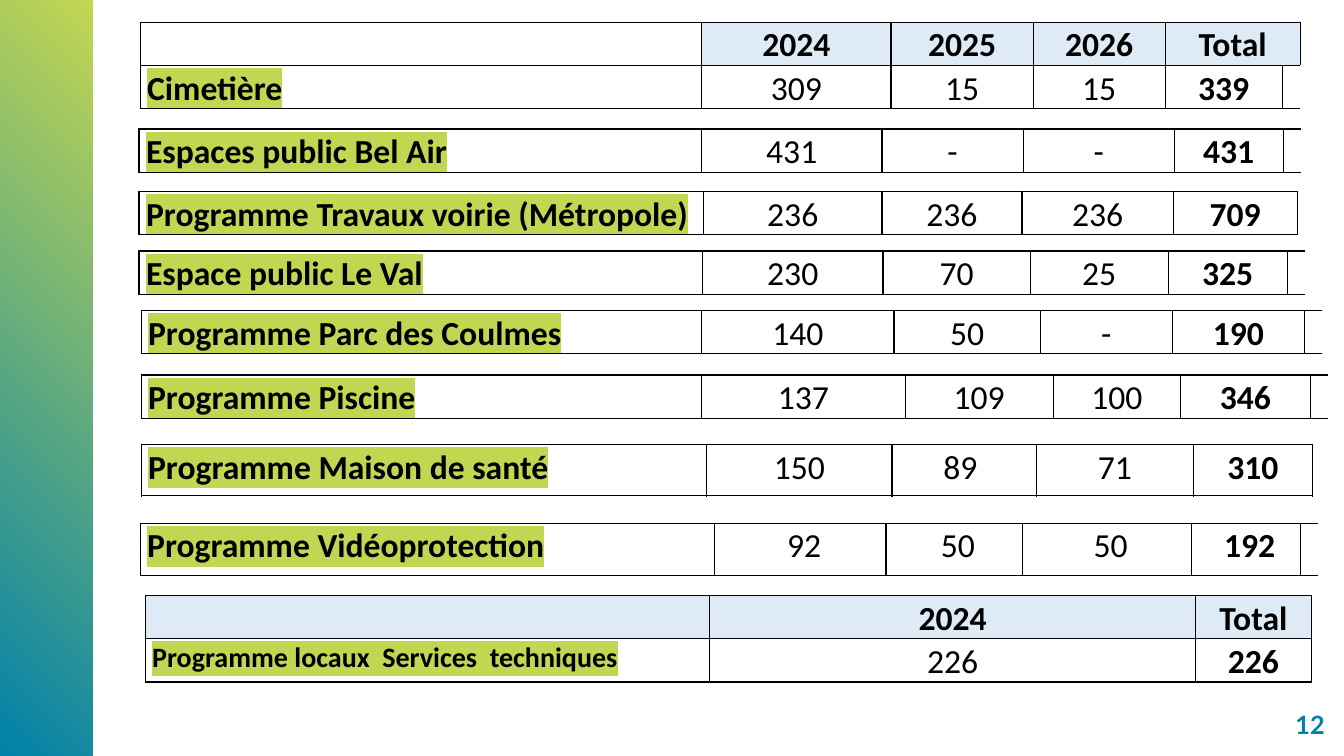
from lxml.etree import SubElement
from pptx import Presentation
from pptx.dml.color import RGBColor
from pptx.enum.shapes import MSO_SHAPE as SHAPE
from pptx.enum.text import MSO_ANCHOR as ANCHOR, PP_ALIGN as ALIGN
from pptx.oxml.ns import qn
from pptx.util import Inches, Pt

BLUE, LIME, PALE, BLACK = "0080AA", "C3D652", "DEEAF6", "000000"
COLS, ROWS = 133.33, 75  # fine layout grid over the slide


def rgb(value):
    return RGBColor.from_string(value)


class Board:
    """Holds the style and the current slide; lengths are grid columns and rows."""

    text = {"size": Pt(24), "name": "Calibri", "bold": True}
    para = {"line_spacing": 1.07, "space_after": Pt(8)}
    inset = {"margin_left": Inches(0.07), "margin_right": Inches(0.07),
             "margin_top": 0, "margin_bottom": 0}

    def __init__(self, prs):
        self.w, self.h = prs.slide_width, prs.slide_height
        self.s = prs.slides.add_slide(prs.slide_layouts[6])

    def x(self, cols):
        return round(self.w * cols / COLS)

    def y(self, rows):
        return round(self.h * rows / ROWS)

    def box(self, x, y, w, h):
        return self.x(x), self.y(y), self.x(w), self.y(h)

    def apply(self, target, values):
        for key, value in values.items():
            setattr(target, key, value)

    def add_text(self, p, text, color=BLACK, mark=None, **font):
        r = p.add_run()
        r.text = text
        self.apply(r.font, {**self.text, **font})
        r.font.color.rgb = rgb(color)
        if mark:
            fill = r.font._element.find(qn("a:solidFill"))
            hl = SubElement(r.font._element, qn("a:highlight"))
            SubElement(hl, qn("a:srgbClr"), val=mark)
            fill.addnext(hl)

    def band(self, *place):
        sp = self.s.shapes.add_shape(SHAPE.RECTANGLE, *self.box(*place))
        sp.shadow.inherit = False
        sp.line.fill.background()
        sp.fill.gradient()
        sp.fill.gradient_angle = 45
        for stop, color, pos in zip(sp.fill.gradient_stops, (BLUE, LIME), (0, 1)):
            stop.color.rgb, stop.position = rgb(color), pos

    def page_number(self, text, *place):
        tf = self.s.shapes.add_textbox(*self.box(*place)).text_frame
        self.apply(tf, {"word_wrap": True, "vertical_anchor": ANCHOR.MIDDLE})
        tf.paragraphs[0].alignment = ALIGN.RIGHT
        self.add_text(tf.paragraphs[0], text, BLUE, size=Pt(18), name="Lato")

    def borders(self, cell, sides):
        tc_pr = cell._tc.get_or_add_tcPr()
        for i, side in enumerate(sides):
            ln = SubElement(tc_pr, qn("a:ln" + side), w=str(Pt(1)))
            SubElement(SubElement(ln, qn("a:solidFill")), qn("a:srgbClr"), val=BLACK)
            tc_pr.insert(i, ln)

    def cell(self, cell, text, fill, **font):
        """A text of None makes a narrow end cell that is open on the right."""
        self.apply(cell, self.inset)
        self.borders(cell, "LTB" if text is None else "LRTB")
        if fill:
            cell.fill.solid()
            cell.fill.fore_color.rgb = rgb(fill)
        else:
            cell.fill.background()
        p = cell.text_frame.paragraphs[0]
        if text:
            self.apply(p, self.para)
            p.alignment = ALIGN.LEFT if font.get("mark") else ALIGN.CENTER
            self.add_text(p, text, **font)

    def table(self, x, y, widths, height, rows, header=(), label_size=24):
        """Label column, yearly amounts and a bold total, under an optional header."""
        grid = ([header] if header else []) + rows
        t = self.s.shapes.add_table(len(grid), len(widths), *self.box(
            x, y, sum(widths), height * len(grid))).table
        self.apply(t, {"first_row": False, "horz_banding": False})
        for col, width in zip(t.columns, widths):
            col.width = self.x(width)
        for i, texts in enumerate(grid):
            t.rows[i].height = self.y(height)
            is_head = bool(header) and i == 0
            last = max(j for j, text in enumerate(texts) if text)
            for j, text in enumerate(texts):
                font = {"bold": is_head or j in (0, last)}
                if j == 0 and not is_head:
                    font.update(mark=LIME, size=Pt(label_size))
                # The corner is plain where yearly columns follow
                fill = PALE if is_head and (j or len(widths) == 3) else None
                self.cell(t.cell(i, j), text, fill, **font)
        if header and len(widths) == 6:
            t.cell(0, 4).merge(t.cell(0, 5))


# Budget lines: left, top, column widths, row height, texts
YEARS = ("", "2024", "2025", "2026", "Total", "")
PROGRAMMES = [
    (13.8, 12.8, (55.8, 17.9, 14, 15, 10.8, 1.2), 4.1,
     ("Espaces public Bel Air", "431", "-", "-", "431", None)),
    (13.8, 19, (56, 17.7, 13.9, 15, 12.3), 4.1,
     ("Programme Travaux voirie (Métropole)", "236", "236", "236", "709")),
    (13.8, 24.9, (55.9, 17.9, 14.6, 13.7, 11.8, 1), 4.1,
     ("Espace public Le Val", "230", "70", "25", "325", None)),
    (14, 30.8, (55.6, 19.1, 14.5, 13.1, 13.1, 0.3), 4.1,
     ("Programme Parc des Coulmes", "140", "50", "-", "190", None)),
    (14, 37.2, (55.6, 20.2, 14.7, 12.6, 12.9, 0.3), 4.1,
     ("Programme Piscine", "137", "109", "100", "346", None)),
    (14, 44.1, (56.1, 18.4, 14.3, 15.6, 11.8), 5.1,
     ("Programme Maison de santé", "150", "89 ", "71", "310")),
    (13.9, 51.9, (57, 17, 13.5, 16.8, 10.8, 1.1), 5.2,
     ("Programme Vidéoprotection", " 92", " 50", " 50", " 192", None)),
]


def main():
    prs = Presentation()
    prs.slide_width, prs.slide_height = Inches(13.33), Inches(7.5)
    board = Board(prs)

    # Side band and page number
    board.band(0, 0, 9.2, ROWS)
    board.page_number("12", 95.2, 69.8, 37.2, 4.1)

    # Table with the year headings
    board.table(13.9, 2.2, (55.7, 18.8, 14.1, 13.1, 11.6, 1), 4.3,
                [("Cimetière", "309", "15", "15", "339", None)], YEARS)

    # One table for each programme
    for x, y, widths, height, texts in PROGRAMMES:
        board.table(x, y, widths, height, [texts])

    # Single-year programme
    board.table(14.4, 59.1, (56, 48.2, 11.5), 4.1,
                [("Programme locaux  Services  techniques", "226", "226")],
                ("", "2024", "Total"), label_size=20)

    prs.save("out.pptx")


if __name__ == "__main__":
    main()
